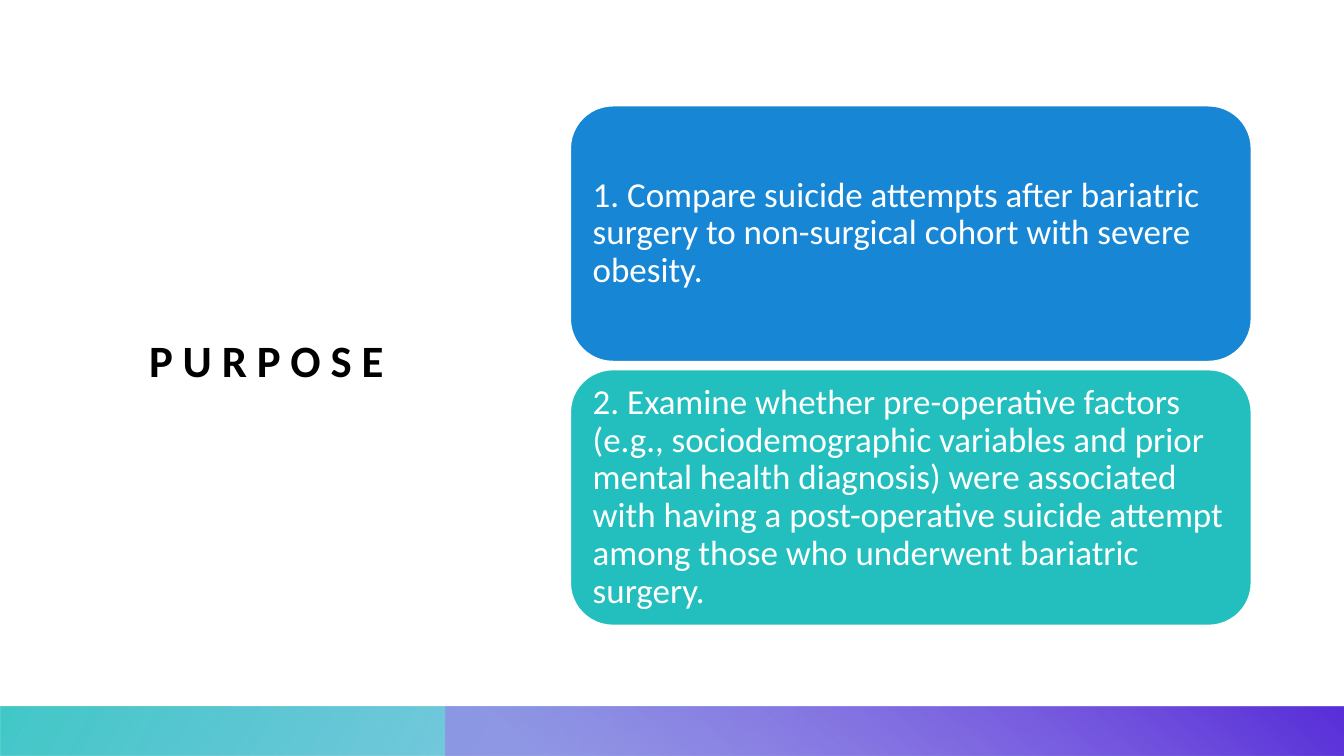
from dataclasses import dataclass

from lxml.etree import SubElement
from pptx import Presentation
from pptx.dml.color import RGBColor
from pptx.enum.shapes import MSO_SHAPE as SHAPE
from pptx.enum.text import MSO_ANCHOR as ANCHOR, MSO_AUTO_SIZE as AUTO, PP_ALIGN as ALIGN
from pptx.oxml.ns import qn
from pptx.slide import Slide
from pptx.util import Pt

WHITE = RGBColor(0xFF, 0xFF, 0xFF)
BLACK = RGBColor(0x00, 0x00, 0x00)
BLUE = RGBColor(0x17, 0x87, 0xD5)
TEAL = RGBColor(0x22, 0xBF, 0xBE)
LILAC = RGBColor(0x9B, 0x82, 0xE8)
PURPLE = RGBColor(0x59, 0x2F, 0xD9)

SLIDE_W, SLIDE_H = 960, 540
BAR_H = 35.4
CARD_X, CARD_Y, CARD_W, CARD_H, CARD_PITCH = 407.4, 75.6, 486.4, 182.6, 188.5
CARD_INSET = 7.1

TITLE_FONT = {"name": "Calibri", "size": Pt(32), "bold": True}
CARD_FONT = {"name": "Calibri", "size": Pt(25)}
MARGINS = ("margin_left", "margin_right", "margin_top", "margin_bottom")
TITLE_FRAME = dict.fromkeys(MARGINS, 0)
CARD_FRAME = dict.fromkeys(MARGINS, Pt(CARD_INSET))


@dataclass
class Stop:
    position: float
    color: RGBColor
    opacity: int


@dataclass
class Bar:
    left: float
    rotation: int
    angle: int
    stops: tuple[Stop, Stop]


@dataclass
class Card:
    text: str
    color: RGBColor


BARS = (
    Bar(0, 180, 150, (Stop(0.14, BLUE, 28), Stop(1, TEAL, 85))),
    Bar(318, 0, 230, (Stop(0.09, LILAC, 68), Stop(0.99, PURPLE, 100))),
)
CARDS = (
    Card("1. Compare suicide attempts after bariatric surgery to non-surgical cohort "
         "with severe obesity.", BLUE),
    Card("2. Examine whether pre-operative factors (e.g., sociodemographic variables and "
         "prior mental health diagnosis) were associated with having a post-operative "
         "suicide attempt among those who underwent bariatric surgery.", TEAL),
)


def add_box(s: Slide, kind: SHAPE, left: float, top: float, width: float, height: float):
    sp = s.shapes.add_shape(kind, Pt(left), Pt(top), Pt(width), Pt(height))
    sp.shadow.inherit = False
    sp.line.fill.background()
    return sp


def write_text(sp, text: str, font: dict, color: RGBColor, frame: dict,
               spacing: float) -> None:
    tf = sp.text_frame
    layout = {"word_wrap": True, "auto_size": AUTO.NONE, "vertical_anchor": ANCHOR.MIDDLE}
    for name, value in {**layout, **frame}.items():
        setattr(tf, name, value)
    p = tf.paragraphs[0]
    p.alignment = ALIGN.LEFT
    p.line_spacing = spacing
    r = p.add_run()
    r.text = text
    for name, value in font.items():
        setattr(r.font, name, value)
    r.font.color.rgb = color


def add_title(s: Slide) -> None:
    sp = s.shapes.title
    sp.left, sp.top, sp.width, sp.height = Pt(106.5), Pt(80.6), Pt(262), Pt(352)
    write_text(sp, "PURPOSE", TITLE_FONT, BLACK, TITLE_FRAME, 1.0)
    for props in sp.element.iter(qn("a:rPr")):
        props.set("spc", "700")


def add_backdrop(s: Slide) -> None:
    sp = add_box(s, SHAPE.RECTANGLE, 0, 0, SLIDE_W, SLIDE_H)
    sp.fill.solid()
    sp.fill.fore_color.rgb = WHITE
    s.shapes.title.element.addprevious(sp.element)


def add_bar(s: Slide, bar: Bar) -> None:
    sp = add_box(s, SHAPE.RECTANGLE, bar.left, SLIDE_H - BAR_H, SLIDE_W - bar.left, BAR_H)
    sp.rotation = bar.rotation
    sp.element.spPr.find(qn("a:xfrm")).set("flipH", "1")
    sp.fill.gradient()
    sp.fill.gradient_angle = 360 - bar.angle
    for target, stop in zip(sp.fill.gradient_stops, bar.stops):
        target.position = stop.position
        target.color.rgb = stop.color
    for clr, stop in zip(sp.element.spPr.iter(qn("a:srgbClr")), bar.stops):
        SubElement(clr, qn("a:alpha")).set("val", str(stop.opacity * 1000))


def add_card(s: Slide, card: Card, row: int) -> None:
    sp = add_box(s, SHAPE.ROUNDED_RECTANGLE, CARD_X, CARD_Y + row * CARD_PITCH,
                 CARD_W, CARD_H)
    sp.fill.solid()
    sp.fill.fore_color.rgb = card.color
    sp.line.color.rgb = WHITE
    sp.line.width = Pt(1)
    write_text(sp, card.text, CARD_FONT, WHITE, CARD_FRAME, 0.9)


def main() -> None:
    prs = Presentation()
    prs.slide_width, prs.slide_height = Pt(SLIDE_W), Pt(SLIDE_H)
    s = prs.slides.add_slide(prs.slide_layouts[5])
    add_backdrop(s)
    add_title(s)
    for bar in BARS:
        add_bar(s, bar)
    for row, card in enumerate(CARDS):
        add_card(s, card, row)
    prs.save("out.pptx")


if __name__ == "__main__":
    main()
